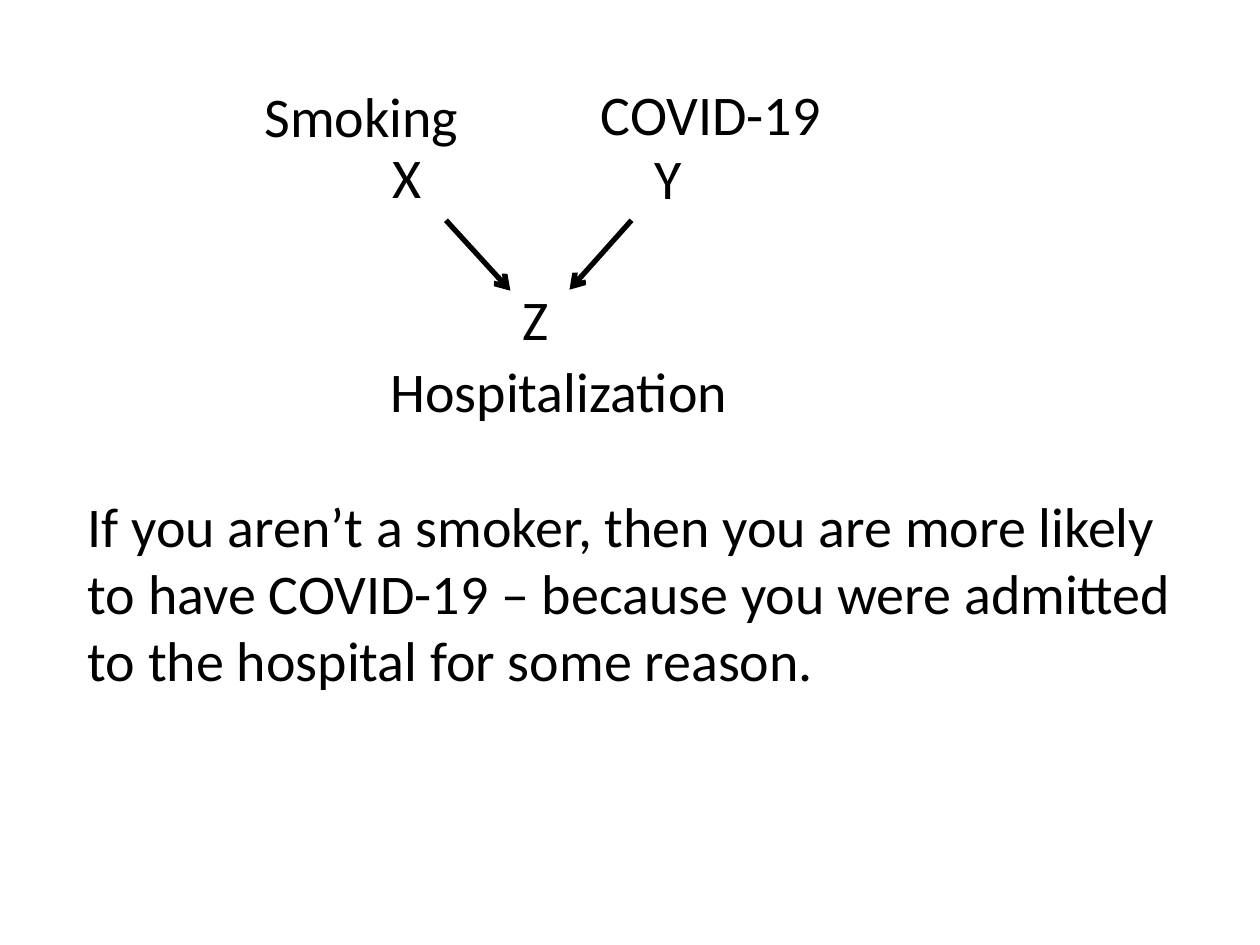
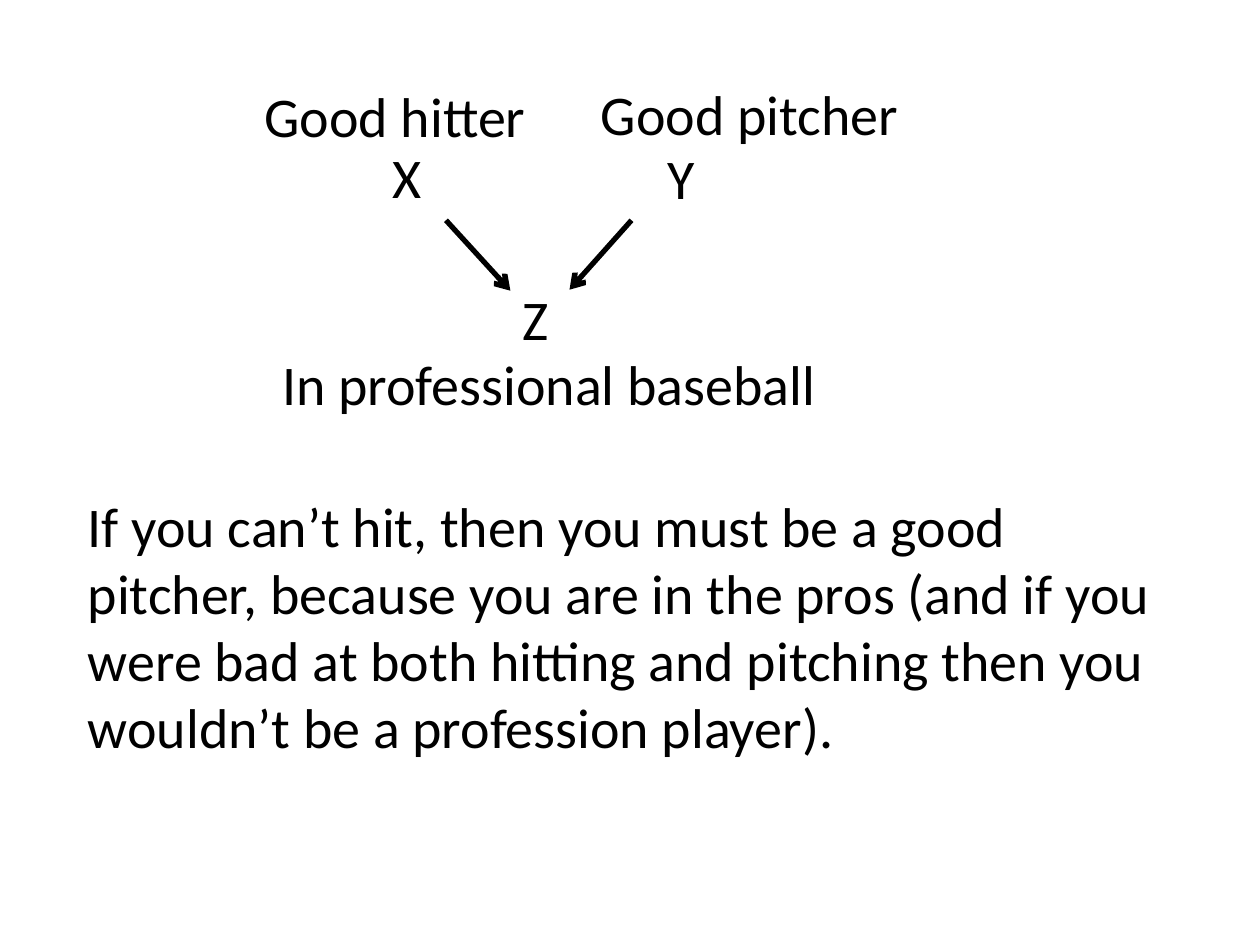
import pptx
import pptx.dml.color
import pptx.enum.shapes
import pptx.enum.text
import pptx.util
from lxml import etree
from pptx.oxml.ns import qn

Cm = pptx.util.Cm

BLACK = pptx.dml.color.RGBColor(0x00, 0x00, 0x00)
FONT = "Calibri"
TEXT_SIZE = pptx.util.Pt(32)
ARROW_WIDTH = pptx.util.Pt(3)
LINE_HEIGHT = 1.63  # one line of text with its insets, cm

DIAGRAM_ORIGIN = (5.08, 1.47)
EXPLANATION_BOX = (1.52, 9.78, 22.4)

# Labels are (text, left, top, width) in cm, relative to the diagram
COLLIDERS = [
    {
        "labels": [
            ("Smoking", 0, 0.05, 5.21),
            ("COVID-19", 6.78, 0, 6.48),
            ("Hospitalization", 2.54, 5.59, 8.38),
        ],
        "y_left": 7.87,
        "explanation": "If you aren’t a smoker, then you are more likely to have "
                       "COVID-19 – because you were admitted to the hospital for "
                       "some reason.",
        "lines": 3,
    },
    {
        "labels": [
            ("Good hitter", 0, 0.05, 5.92),
            ("Good pitcher", 6.78, 0, 7.21),
            ("In professional baseball", 0.36, 5.46, 12.9),
        ],
        "y_left": 8.13,
        "explanation": "If you can’t hit, then you must be a good pitcher, because "
                       "you are in the pros (and if you were bad at both hitting and "
                       "pitching then you wouldn’t be a profession player).",
        "lines": 4,
    },
]


def add_text(shapes, text, left, top, width, height=LINE_HEIGHT, wrap=True):
    frame = shapes.add_textbox(Cm(left), Cm(top), Cm(width), Cm(height)).text_frame
    frame.word_wrap = wrap
    frame.auto_size = pptx.enum.text.MSO_AUTO_SIZE.SHAPE_TO_FIT_TEXT
    frame.text = text
    font = frame.paragraphs[0].font
    font.name, font.size = FONT, TEXT_SIZE
    font.color.rgb = BLACK


def add_arrow(shapes, x1, y1, x2, y2):
    arrow = shapes.add_connector(
        pptx.enum.shapes.MSO_CONNECTOR.STRAIGHT, Cm(x1), Cm(y1), Cm(x2), Cm(y2))
    arrow.line.color.rgb = BLACK
    arrow.line.width = ARROW_WIDTH
    etree.SubElement(arrow.line._get_or_add_ln(), qn("a:tailEnd"), type="arrow")
    etree.SubElement(arrow._element.spPr, qn("a:effectLst"))


def add_diagram(slide, origin, labels, y_left):
    """Two causes, X and Y, pointing at their common effect Z."""
    left, top = origin
    shapes = slide.shapes.add_group_shape().shapes

    # Arrows into Z
    for x1, y1, x2, y2 in [(3.91, 2.97, 5.21, 4.39), (7.65, 2.97, 6.4, 4.37)]:
        add_arrow(shapes, left + x1, top + y1, left + x2, top + y2)

    # Variable letters
    for letter, x, y, width in [("X", 2.59, 1.27, 1.12),
                                ("Y", y_left, 1.3, 1.07),
                                ("Z", 5.21, 4.14, 1.22)]:
        add_text(shapes, letter, left + x, top + y, width, wrap=letter == "Z")

    # What the letters stand for
    for text, x, y, width in labels:
        add_text(shapes, text, left + x, top + y, width)


def add_explanation(slide, box, text, lines):
    left, top, width = box
    line_pitch = 1.37
    add_text(slide.shapes, text, left, top, width,
             LINE_HEIGHT + (lines - 1) * line_pitch)


def main():
    deck = pptx.Presentation()
    deck.slide_width, deck.slide_height = Cm(25.4), Cm(19.05)
    for collider in COLLIDERS:
        slide = deck.slides.add_slide(deck.slide_layouts[6])
        add_explanation(slide, EXPLANATION_BOX,
                        collider["explanation"], collider["lines"])
        add_diagram(slide, DIAGRAM_ORIGIN, collider["labels"], collider["y_left"])
    deck.save("out.pptx")


if __name__ == "__main__":
    main()
